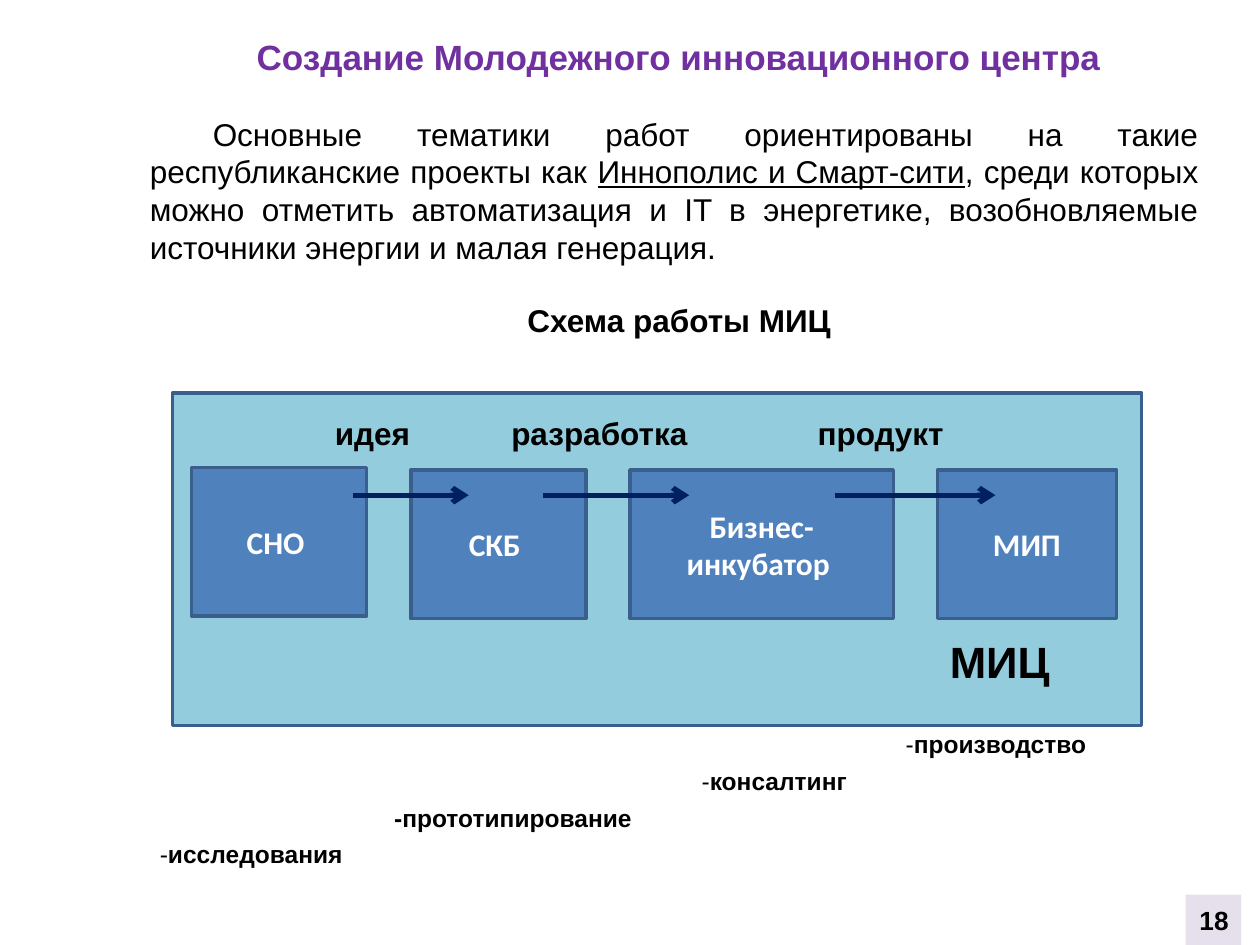
from pptx import Presentation
from pptx.dml.color import RGBColor
from pptx.enum.shapes import MSO_CONNECTOR, MSO_SHAPE
from pptx.enum.text import MSO_ANCHOR, PP_ALIGN
from pptx.oxml.ns import qn
from pptx.util import Inches, Pt
from lxml.etree import SubElement

# Content: runs are (text, style) pairs
TITLE = "Создание Молодежного инновационного центра"
INTRO = [
    ("Основные тематики работ ориентированы на такие республиканские проекты как ", {}),
    ("Иннополис и Смарт-сити", {"underline": True}),
    (", среди которых можно отметить автоматизация и IT в энергетике, "
     "возобновляемые источники энергии и малая генерация.", {}),
]
SCHEME_TITLE = "Схема работы МИЦ"
CENTER_NAME = "МИЦ"
PAGE_NUMBER = "18"
BOLD = {"bold": True}

# Stages: text, top, width
STAGES = [("СНО ", 3.71, 1.39), ("СКБ ", 3.73, 1.39),
          ("Бизнес-инкубатор ", 3.73, 2.09), ("МИП", 3.73, 1.42)]
STAGE_LEFT, STAGE_GAP, STAGE_HEIGHT = 1.52, 0.35, 1.18

# Transitions: label, label left, label width, arrow start, arrow end
TRANSITIONS = [("идея", 2.56, 1.1, 2.8, 3.72),
               ("разработка", 3.96, 2.14, 4.31, 5.47),
               ("продукт", 6.39, 1.61, 6.63, 7.9)]
LABEL_TOP, ARROW_Y = 3.24, 3.93

# Activities, descending from right to left: runs, left, width
ACTIVITIES = [([("-", {}), ("производство", BOLD)], 7.09, 2.44),
              ([("-", {}), ("консалтинг", BOLD)], 5.47, 2.03),
              ([("-прототипирование", BOLD)], 3.03, 3.48),
              ([("-", {}), ("исследования", BOLD)], 1.17, 2.47)]
ACTIVITY_TOP, ACTIVITY_STEP = 5.74, 0.29

WHITE, BLACK, PURPLE, NAVY = "FFFFFF", "000000", "7030A0", "002060"
PANEL, STAGE, BORDER, LILAC = "93CDDD", "4F81BD", "3A5F8C", "E6E0EC"


def rgb(value):
    return RGBColor.from_string(value)


def write(shape, runs, size, color=BLACK, font="Arial",
          align=PP_ALIGN.LEFT, anchor=MSO_ANCHOR.TOP):
    frame = shape.text_frame
    frame.word_wrap = True
    frame.vertical_anchor = anchor
    paragraph = frame.paragraphs[0]
    paragraph.alignment = align
    for text, style in runs:
        run = paragraph.add_run()
        run.text = text
        run.font.name = font
        run.font.size = Pt(size)
        run.font.color.rgb = rgb(color)
        run.font.bold = style.get("bold", False)
        run.font.underline = style.get("underline", False)
    return paragraph


def add_box(slide, bounds, fill, border=None):
    box = slide.shapes.add_shape(MSO_SHAPE.RECTANGLE, *map(Inches, bounds))
    box.shadow.inherit = False
    box.fill.solid()
    box.fill.fore_color.rgb = rgb(fill)
    if border:
        box.line.color.rgb = rgb(border)
        box.line.width = Pt(2)
    else:
        box.line.fill.background()
    return box


def add_label(slide, bounds, runs, size):
    write(slide.shapes.add_textbox(*map(Inches, bounds)), runs, size)


def add_arrow(slide, start, end, y):
    arrow = slide.shapes.add_connector(
        MSO_CONNECTOR.STRAIGHT, Inches(start), Inches(y), Inches(end), Inches(y))
    arrow.line.color.rgb = rgb(NAVY)
    arrow.line.width = Pt(3)
    SubElement(arrow.line._get_or_add_ln(), qn("a:tailEnd"), type="arrow")
    SubElement(arrow._element.spPr, qn("a:effectLst"))


def main():
    deck = Presentation()
    deck.slide_width, deck.slide_height = Inches(10), Inches(7.5)
    slide = deck.slides.add_slide(deck.slide_layouts[6])

    # Heading and introduction
    write(add_box(slide, (1.09, 0.23, 8.59, 0.44), WHITE), [(TITLE, BOLD)], 20,
          PURPLE, align=PP_ALIGN.CENTER, anchor=MSO_ANCHOR.MIDDLE)
    intro = write(add_box(slide, (1.09, 0.86, 8.52, 1.31), WHITE), INTRO, 18,
                  align=PP_ALIGN.JUSTIFY)
    intro._p.get_or_add_pPr().set("indent", str(Inches(0.5)))
    write(add_box(slide, (1.17, 2.34, 8.44, 0.4), WHITE), [(SCHEME_TITLE, BOLD)], 18,
          align=PP_ALIGN.CENTER)

    # Center panel with its stages
    add_box(slide, (1.37, 3.12, 7.69, 2.64), PANEL, BORDER)
    left = STAGE_LEFT
    for name, top, width in STAGES:
        stage = add_box(slide, (left, top, width, STAGE_HEIGHT), STAGE, BORDER)
        write(stage, [(name, BOLD)], 18, WHITE, "Calibri",
              PP_ALIGN.CENTER, MSO_ANCHOR.MIDDLE)
        left += width + STAGE_GAP
    add_label(slide, (7.44, 4.99, 1.44, 0.65), [(CENTER_NAME, BOLD)], 25)

    # Transitions between stages
    for name, label_left, width, start, end in TRANSITIONS:
        add_label(slide, (label_left, LABEL_TOP, width, 0.5), [(name, BOLD)], 18)
        add_arrow(slide, start, end, ARROW_Y)

    # Activities below the panel
    for row, (runs, activity_left, width) in enumerate(ACTIVITIES):
        top = ACTIVITY_TOP + row * ACTIVITY_STEP
        add_label(slide, (activity_left, top, width, 0.42), runs, 14)

    # Page number
    write(add_box(slide, (9.41, 7.1, 0.44, 0.4), LILAC), [(PAGE_NUMBER, BOLD)], 15,
          align=PP_ALIGN.RIGHT, anchor=MSO_ANCHOR.MIDDLE)

    deck.save("out.pptx")


if __name__ == "__main__":
    main()
